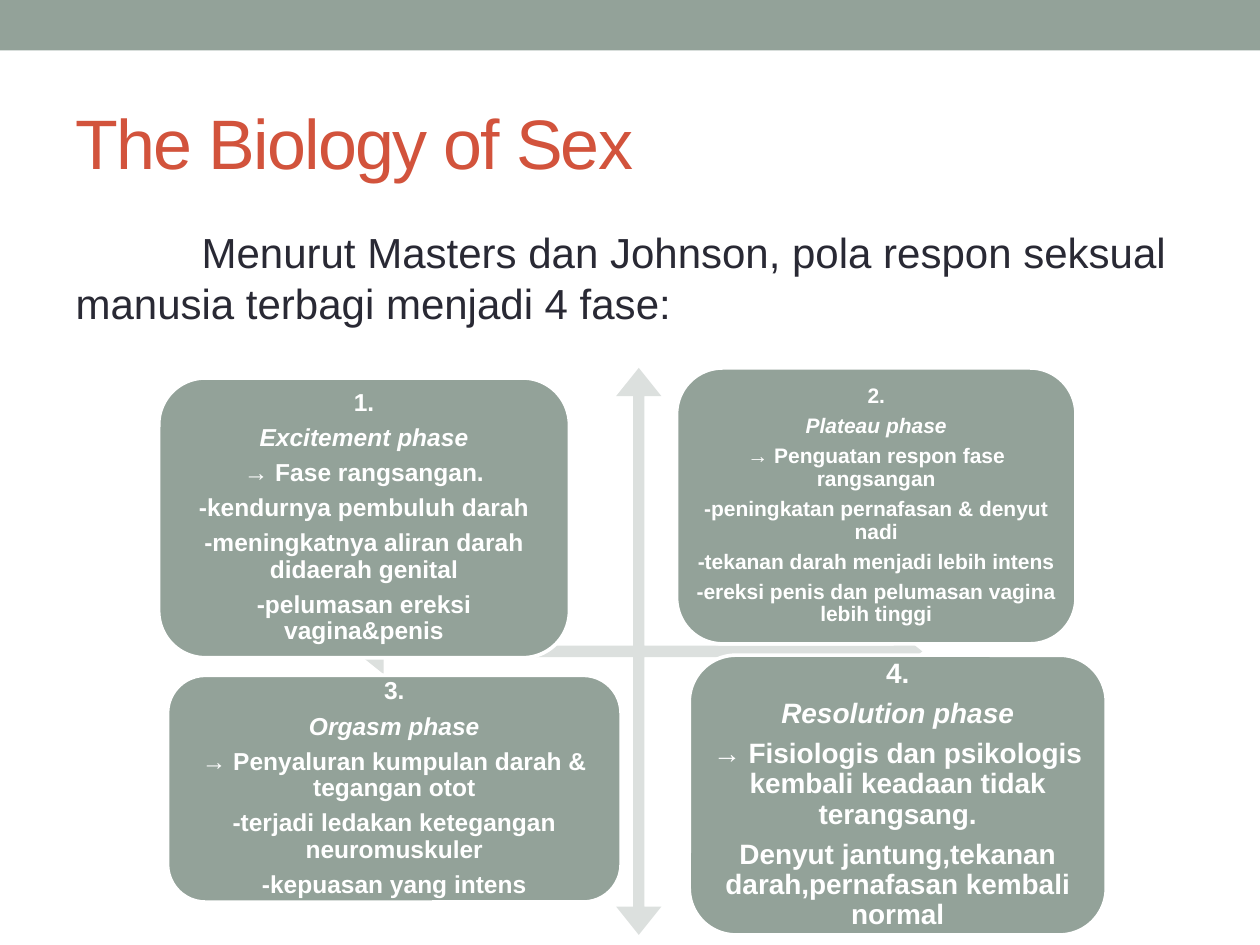
from pptx import Presentation
from pptx.dml.color import RGBColor
from pptx.enum.shapes import MSO_SHAPE
from pptx.enum.text import MSO_ANCHOR, MSO_AUTO_SIZE, PP_ALIGN
from pptx.util import Pt

FONT = "Arial"
COLORS = {
    "sage": "93A299",
    "pale": "DCE0DE",
    "title": "D2533C",
    "text": "292934",
    "white": "FFFFFF",
}

# Each phase: left, top, width, height, font size, inset, paragraphs
PHASES = [
    (90.72, 216, 234.72, 159.84, 14, 4.2, [
        "1.",
        "Excitement phase",
        "→ Fase rangsangan.",
        "-kendurnya pembuluh darah",
        "-meningkatnya aliran darah didaerah genital",
        "-pelumasan ereksi vagina&penis",
    ]),
    (386.64, 210.24, 228.24, 157.68, 12, 3.6, [
        "2.",
        "Plateau phase",
        "→ Penguatan respon fase rangsangan",
        "-peningkatan pernafasan & denyut nadi",
        "-tekanan darah menjadi lebih intens",
        "-ereksi penis dan pelumasan vagina lebih tinggi",
    ]),
    (95.76, 385.92, 259.2, 129.6, 14, 4.2, [
        "3.",
        "Orgasm phase",
        "→ Penyaluran kumpulan darah & tegangan otot",
        "-terjadi ledakan ketegangan neuromuskuler",
        "-kepuasan yang intens",
    ]),
    (393.84, 374.4, 238.32, 159.84, 16, 4.8, [
        "4.",
        "Resolution phase",
        "→ Fisiologis dan psikologis kembali keadaan tidak terangsang.",
        "Denyut jantung,tekanan darah,pernafasan kembali normal",
    ]),
]


def color(name):
    return RGBColor.from_string(COLORS[name])


def format_runs(paragraph, size, color_name, bold=False, italic=False):
    for run in paragraph.runs:
        run.font.name = FONT
        run.font.size = Pt(size)
        run.font.bold = bold
        run.font.italic = italic
        run.font.color.rgb = color(color_name)


def add_filled_shape(slide, kind, left, top, width, height, fill):
    shape = slide.shapes.add_shape(kind, Pt(left), Pt(top), Pt(width), Pt(height))
    shape.shadow.inherit = False
    shape.fill.solid()
    shape.fill.fore_color.rgb = color(fill)
    shape.line.fill.background()
    return shape


def fill_placeholder(placeholder, text, top, height, size, color_name, anchor):
    placeholder.left, placeholder.top = Pt(36), Pt(top)
    placeholder.width, placeholder.height = Pt(648), Pt(height)
    text_frame = placeholder.text_frame
    text_frame.text = text
    text_frame.auto_size = MSO_AUTO_SIZE.NONE
    text_frame.vertical_anchor = anchor
    paragraph = text_frame.paragraphs[0]
    paragraph.alignment = PP_ALIGN.LEFT
    format_runs(paragraph, size, color_name)
    return paragraph


def add_title(slide):
    paragraph = fill_placeholder(slide.shapes.title, "The Biology of Sex",
                                 41.76, 77.76, 40, "title", MSO_ANCHOR.MIDDLE)
    # Tighten the letter spacing by one point
    paragraph.runs[0].font._element.set("spc", "-100")


def add_introduction(slide):
    paragraph = fill_placeholder(
        slide.placeholders[1],
        "Menurut Masters dan Johnson, pola respon seksual manusia terbagi menjadi 4 fase:",
        126, 383.76, 24, "text", MSO_ANCHOR.TOP)
    paragraph.space_before = Pt(4.8)
    # No bullet, first line indented by one inch
    properties = paragraph._p.get_or_add_pPr()
    properties.set("marL", "0")
    properties.set("indent", str(Pt(72)))
    properties.append(properties.makeelement(
        "{http://schemas.openxmlformats.org/drawingml/2006/main}buNone", {}))


def add_cross_arrow(slide):
    arrow = add_filled_shape(slide, MSO_SHAPE.QUAD_ARROW, 203.04, 210.24, 324, 324, "pale")
    for index, value in enumerate((0.02, 0.04, 0.05)):
        arrow.adjustments[index] = value


def add_phase(slide, left, top, width, height, size, inset, lines):
    box = add_filled_shape(slide, MSO_SHAPE.ROUNDED_RECTANGLE,
                           left, top, width, height, "sage")
    box.line.color.rgb = color("white")
    box.line.width = Pt(2.08)
    text_frame = box.text_frame
    text_frame.text = "\n".join(lines)
    text_frame.word_wrap = True
    text_frame.vertical_anchor = MSO_ANCHOR.MIDDLE
    text_frame.margin_left = text_frame.margin_right = Pt(inset)
    text_frame.margin_top = text_frame.margin_bottom = Pt(inset)
    for index, paragraph in enumerate(text_frame.paragraphs):
        paragraph.alignment = PP_ALIGN.CENTER
        paragraph.line_spacing = 0.9
        paragraph.space_after = Pt(round(0.35 * size, 2))
        # The second line names the phase
        format_runs(paragraph, size, "white", bold=True, italic=index == 1)


def main():
    presentation = Presentation()
    presentation.slide_width, presentation.slide_height = Pt(720), Pt(540)
    slide = presentation.slides.add_slide(presentation.slide_layouts[1])

    # Top band, title and introduction
    add_filled_shape(slide, MSO_SHAPE.RECTANGLE, 0, 0, 720, 28.8, "sage")
    add_title(slide)
    add_introduction(slide)

    # Four phases around the cross arrow
    add_cross_arrow(slide)
    for phase in PHASES:
        add_phase(slide, *phase)

    presentation.save("out.pptx")


if __name__ == "__main__":
    main()
